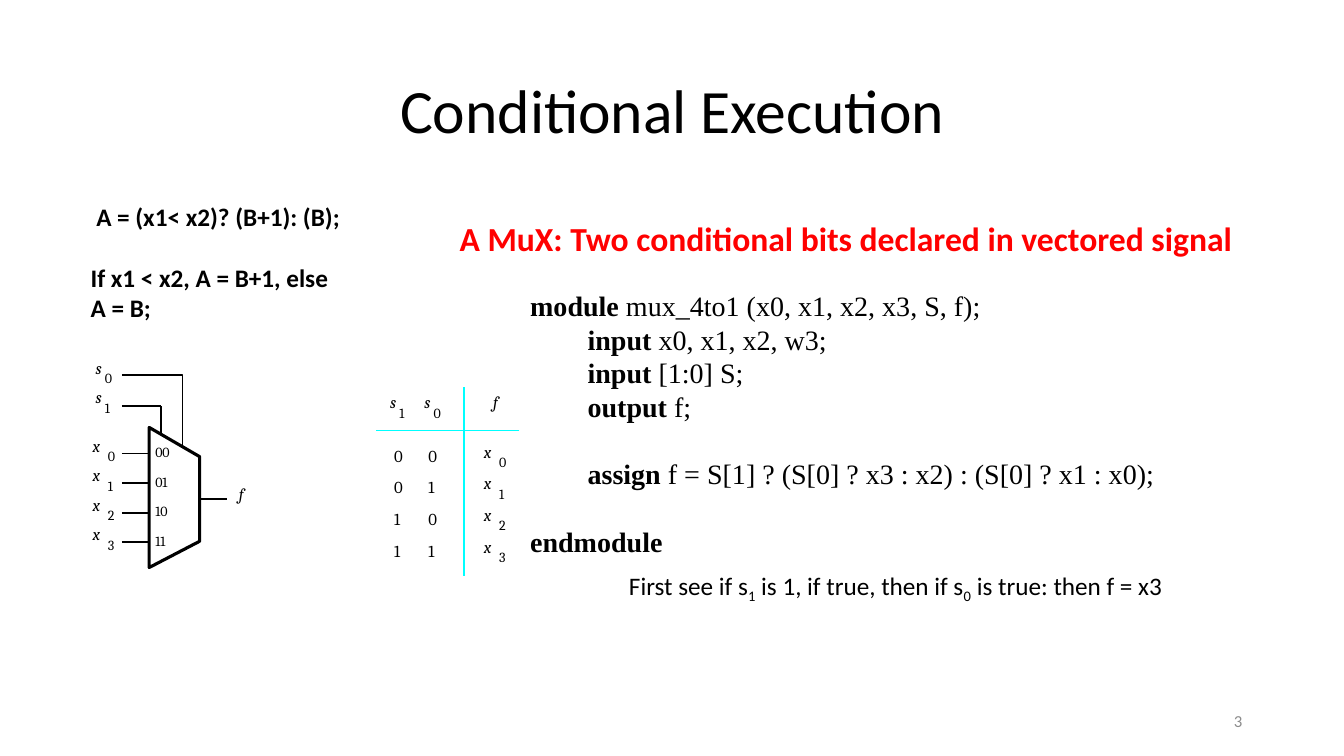
"""Build the slide on conditional execution with a four-to-one multiplexer."""
from lxml import etree
from pptx import Presentation
from pptx.dml.color import RGBColor
from pptx.enum.shapes import MSO_CONNECTOR
from pptx.enum.text import MSO_ANCHOR, MSO_AUTO_SIZE, PP_ALIGN
from pptx.oxml.ns import qn
from pptx.util import Inches, Pt

STRAIGHT = MSO_CONNECTOR.STRAIGHT
MIDDLE = MSO_ANCHOR.MIDDLE
CENTER, RIGHT = PP_ALIGN.CENTER, PP_ALIGN.RIGHT
FIT = MSO_AUTO_SIZE.SHAPE_TO_FIT_TEXT
SANS, MATH, SERIF = "Calibri", "Cambria", "Times New Roman"
BLACK, WHITE, RED, CYAN, GRAY = "000000", "FFFFFF", "FF0000", "00FFFF", "8C8C8C"

TITLE = "Conditional Execution"
HEADING = "A MuX: Two conditional bits declared in vectored signal"
EXAMPLE = [(" A = (x1< x2)? (B+1): (B);", 0), ("If x1 < x2, A = B+1, else", 22), ("A = B;", 0)]
CODE = [
    ("module", " mux_4to1 (x0, x1, x2, x3, S, f);", 0, 0),
    ("input", " x0, x1, x2, w3;", 1, 0),
    ("input", " [1:0] S;", 1, 0),
    ("output", " f;", 1, 0),
    ("assign", " f = S[1] ? (S[0] ? x3 : x2) : (S[0] ? x1 : x0);", 1, 1),
    ("endmodule", "", 0, 1),
]
NOTE = [("First see if s", False), ("1", True), (" is 1, if true, then if s", False),
        ("0", True), (" is true: then f = x3", False)]
INPUT_CODES = ["00", "01", "10", "11"]
SUBSCRIPT_SHIFT = {"s": 0.09, "x": 0.15}

MUX_PITCH = 0.88 / 3
TABLE_PITCH = 0.94 / 3
CODE_LINE, CODE_INDENT = 24.1, 0.57
WIRE_LEFT, MUX_LEFT, MUX_RIGHT = 1.21, 1.48, 1.98
TABLE_COLUMNS = [3.91, 4.25]
MUX_OUTLINE = [(MUX_RIGHT, 5.37), (MUX_RIGHT, 4.53), (MUX_LEFT, 4.24), (MUX_LEFT, 5.63)]
SELECT_WIRE = [(WIRE_LEFT, 3.72), (1.81, 3.72), (1.81, 4.42)]
WIRES = [
    ((WIRE_LEFT, 4.03), (1.6, 4.03), BLACK),
    ((1.6, 4.03), (1.6, 4.32), BLACK),
    ((2.25, 4.95), (MUX_RIGHT, 4.95), BLACK),
    ((5.15, 4.27), (3.73, 4.27), CYAN),
    ((4.6, 5.71), (4.6, 3.84), CYAN),
]

deck = Presentation()
deck.slide_width, deck.slide_height = Inches(13.33), Inches(7.5)
page = deck.slides.add_slide(deck.slide_layouts[5])


def color(value):
    """Turn a hex string into a colour."""
    return RGBColor.from_string(value)


def style(span, size, face, tint=BLACK, bold=False, italic=False):
    """Set the font of one run."""
    font = span.font
    font.size, font.name, font.bold, font.italic = Pt(size), face, bold, italic
    font.color.rgb = color(tint)


def text_box(left, top, width, height, wrap=False):
    """Add an empty text box and return its frame."""
    box = page.shapes.add_textbox(Inches(left), Inches(top), Inches(width), Inches(height))
    frame = box.text_frame
    frame.word_wrap, frame.auto_size = wrap, FIT
    return frame


def write(frame, text, size, face, **look):
    """Fill a frame with one styled paragraph and return it."""
    frame.text = text
    para = frame.paragraphs[0]
    style(para.runs[0], size, face, **look)
    return para


def label(text, left, top, size=12, italic=False):
    """Place a diagram label without margins."""
    frame = text_box(left, top, 0.06 + 0.06 * len(text) + 0.04 * (size > 10), size * 0.024)
    frame.margin_left = frame.margin_top = frame.margin_right = frame.margin_bottom = 0
    write(frame, text, size, MATH, italic=italic)


def variable(letter, index, left, top):
    """Place an italic letter with its lowered index."""
    label(letter, left, top, italic=True)
    label(str(index), left + SUBSCRIPT_SHIFT[letter], top + 0.12, size=10)


def wire(start, end, tint=BLACK):
    """Draw a straight line between two points."""
    line = page.shapes.add_connector(STRAIGHT, *(Inches(value) for value in start + end))
    line.line.color.rgb, line.line.width = color(tint), Pt(1.25)
    etree.SubElement(line._element.spPr, qn("a:effectLst"))


def outline(points, width, closed):
    """Draw a polygon, or an open path, through the points."""
    corners = [(Inches(across), Inches(down)) for across, down in points]
    builder = page.shapes.build_freeform(*corners[0], scale=1.0)
    builder.add_line_segments(corners[1:], close=closed)
    shape = builder.convert_to_shape()
    shape.shadow.inherit = False
    shape.line.color.rgb, shape.line.width = color(BLACK), Pt(width)
    if closed:
        shape.fill.solid()
        shape.fill.fore_color.rgb = color(WHITE)
    else:
        shape.fill.background()


def add_texts():
    """Write the title, example, code, note and page number."""
    title = page.shapes.title
    title.left, title.top = Inches(0.92), Inches(0.4)
    title.width, title.height = Inches(11.5), Inches(1.45)
    title.text_frame.vertical_anchor = MIDDLE
    para = write(title.text_frame, TITLE, 44, SANS)
    para.alignment, para.line_spacing = CENTER, 0.9

    frame = text_box(0.8, 1.95, 2.71, 1.62)
    frame.text = "\n".join(text for text, gap in EXAMPLE)
    for para, (text, gap) in zip(frame.paragraphs, EXAMPLE):
        para.space_before = Pt(gap)
        style(para.runs[0], 18, SANS, bold=True)

    write(text_box(4.46, 2.11, 8.01, 0.5), HEADING, 24, SANS, tint=RED, bold=True)

    frame = text_box(5.16, 2.81, 8.46, 2.79, wrap=True)
    frame.text = "\n".join(keyword for keyword, *rest in CODE)
    for para, (keyword, rest, level, gap) in zip(frame.paragraphs, CODE):
        para.line_spacing, para.space_before = Pt(CODE_LINE), Pt(gap * CODE_LINE)
        para._p.get_or_add_pPr().set("marL", str(Inches(level * CODE_INDENT)))
        style(para.runs[0], 20, SERIF, bold=True)
        if rest:
            span = para.add_run()
            span.text = rest
            style(span, 20, SERIF)

    para = text_box(6.14, 5.61, 5.74, 0.4).paragraphs[0]
    for text, lowered in NOTE:
        span = para.add_run()
        span.text = text
        style(span, 18, SANS)
        if lowered:
            span._r.get_or_add_rPr().set("baseline", "-25000")

    frame = text_box(9.42, 6.95, 3, 0.4, wrap=True)
    frame.auto_size, frame.vertical_anchor = MSO_AUTO_SIZE.NONE, MIDDLE
    write(frame, "3", 12, SANS, tint=GRAY).alignment = RIGHT


def add_diagram():
    """Draw the multiplexer and its truth table."""
    outline(MUX_OUTLINE, 2.25, closed=True)
    outline(SELECT_WIRE, 1.25, closed=False)
    for start, end, tint in WIRES:
        wire(start, end, tint)
    label("f", 2.37, 4.8, italic=True)
    label("f", 4.89, 3.89, italic=True)
    for index in range(2):
        variable("s", index, 0.95, 3.55 + 0.29 * index)
        variable("s", index, 4.21 - 0.34 * index, 3.89)
    for index, bits in enumerate(INPUT_CODES):
        drop, row = index * MUX_PITCH, index * TABLE_PITCH
        wire((WIRE_LEFT, 4.5 + drop), (MUX_LEFT, 4.5 + drop))
        variable("x", index, 0.92, 4.32 + drop)
        label(bits, 1.54, 4.4 + drop, size=10)
        variable("x", index, 4.8, 4.38 + row)
        for left, bit in zip(TABLE_COLUMNS, bits):
            label(bit, left, 4.42 + row)


add_texts()
add_diagram()
deck.save("out.pptx")
